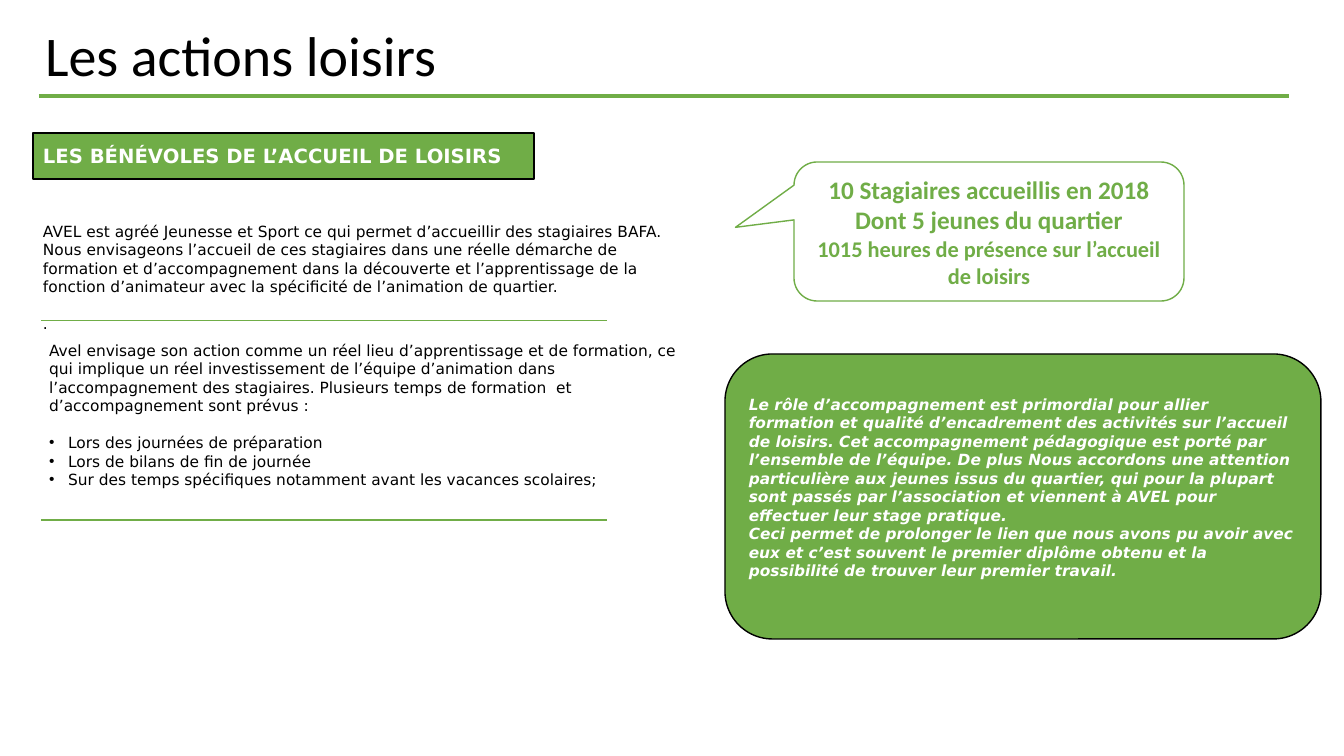
from lxml import etree
from pptx import Presentation
from pptx import util as u
from pptx.dml.color import RGBColor
from pptx.enum import shapes, text
from pptx.oxml import ns

PX = 914400 / 100.8
GREEN = RGBColor(0x70, 0xAD, 0x47)
BLACK = RGBColor(0, 0, 0)
WHITE = RGBColor(0xFF, 0xFF, 0xFF)


def px(*lengths):
    return [u.Emu(round(length * PX)) for length in lengths]


def write(box, lines, size, color, font="DejaVu Sans", bold=False, italic=False,
          align=text.PP_ALIGN.LEFT, anchor=text.MSO_ANCHOR.TOP):
    frame = box.text_frame
    frame.text = "\n".join(lines)
    frame.word_wrap = True
    frame.auto_size = text.MSO_AUTO_SIZE.NONE
    frame.vertical_anchor = anchor
    for para in frame.paragraphs:
        para.alignment = align
        para.space_before = u.Pt(0)
        for span in para.runs:
            span.font.name, span.font.size = font, u.Pt(size)
            span.font.bold, span.font.italic = bold, italic
            span.font.color.rgb = color
    return frame.paragraphs


deck = Presentation()
deck.slide_width, deck.slide_height = px(1344, 756)
page = deck.slides.add_slide(deck.slide_layouts[1])

# Title
title = page.shapes.title
title.left, title.top, title.width, title.height = px(35, 0, 1080, 94)
heading = write(title, ["Les actions loisirs"], 40, BLACK, "Calibri",
                anchor=text.MSO_ANCHOR.BOTTOM)
heading[0].line_spacing = 0.9

# Framed shapes: section banner, callout, role panel
frames = []
for kind, area, fill, outline, weight in [
    (shapes.MSO_SHAPE.RECTANGLE, (33, 133, 501, 46), GREEN, BLACK, 2),
    (shapes.MSO_SHAPE.ROUNDED_RECTANGULAR_CALLOUT, (794, 162, 390, 139), None, GREEN, 1),
    (shapes.MSO_SHAPE.ROUNDED_RECTANGLE, (725, 354, 596, 285), GREEN, BLACK, 1),
]:
    box = page.shapes.add_shape(kind, *px(*area))
    box.shadow.inherit = False
    if fill is None:
        box.fill.background()
    else:
        box.fill.solid()
        box.fill.fore_color.rgb = fill
    box.line.color.rgb = outline
    box.line.width = u.Pt(weight)
    frames.append(box)
banner, callout, panel = frames

write(banner, ["LES BÉNÉVOLES DE L’ACCUEIL DE LOISIRS"], 14, WHITE, bold=True,
      anchor=text.MSO_ANCHOR.MIDDLE)

callout.adjustments[0], callout.adjustments[1] = -0.65, -0.03
figures = write(callout, [
    "10 Stagiaires accueillis en 2018",
    "Dont 5 jeunes du quartier",
    "1015 heures de présence sur l’accueil de loisirs",
], 18, GREEN, "Calibri", bold=True, align=text.PP_ALIGN.CENTER,
    anchor=text.MSO_ANCHOR.MIDDLE)
figures[2].runs[0].font.size = u.Pt(16)

write(panel, [
    "Le rôle d’accompagnement est primordial pour allier formation et qualité "
    "d’encadrement des activités sur l’accueil de loisirs. Cet accompagnement "
    "pédagogique est porté par l’ensemble de l’équipe. De plus Nous accordons une "
    "attention particulière aux jeunes issus du quartier, qui pour la plupart sont "
    "passés par l’association et viennent à AVEL pour effectuer leur stage pratique.",
    "Ceci permet de prolonger le lien que nous avons pu avoir avec eux et c’est "
    "souvent le premier diplôme obtenu et la possibilité de trouver leur premier travail.",
], 11, WHITE, bold=True, italic=True, anchor=text.MSO_ANCHOR.MIDDLE)
panel.text_frame.margin_bottom = px(23)[0]

# Green rules
for left, right, y, weight in [(39, 1289, 96, 2.25), (41, 607, 321, 0.75), (41, 607, 520, 0.75)]:
    rule = page.shapes.add_connector(shapes.MSO_CONNECTOR.STRAIGHT, *px(left, y, right, y))
    rule.line.color.rgb = GREEN
    rule.line.width = u.Pt(weight)
    etree.SubElement(rule._element.spPr, ns.qn("a:effectLst"))

# Introduction
intro = page.shapes.add_textbox(*px(33, 217, 672, 122))
intro_paras = write(intro, [
    "AVEL est agréé Jeunesse et Sport ce qui permet d’accueillir des stagiaires BAFA. "
    "Nous envisageons l’accueil de ces stagiaires dans une réelle démarche de formation "
    "et d’accompagnement dans la découverte et l’apprentissage de la fonction "
    "d’animateur avec la spécificité de l’animation de quartier.",
    ".",
], 11, BLACK)
intro_paras[1].space_before = u.Pt(13)

# Training times
body = page.placeholders[1]
body.left, body.top, body.width, body.height = px(39, 336, 672, 160)
body_paras = write(body, [
    "Avel envisage son action comme un réel lieu d’apprentissage et de formation, ce qui "
    "implique un réel investissement de l’équipe d’animation dans l’accompagnement des "
    "stagiaires. Plusieurs temps de formation  et d’accompagnement sont prévus :",
    "Lors des journées de préparation",
    "Lors de bilans de fin de journée",
    "Sur des temps spécifiques notamment avant les vacances scolaires;",
], 11, BLACK)
body_paras[1].space_before = u.Pt(13)
for index, para in enumerate(body_paras):
    props = para._p.get_or_add_pPr()
    indent = px(19)[0] if index else 0
    props.set("marL", str(indent))
    props.set("indent", str(-indent))
    if index:
        etree.SubElement(props, ns.qn("a:buFont"), typeface="Arial")
        etree.SubElement(props, ns.qn("a:buChar"), char="•")
    else:
        etree.SubElement(props, ns.qn("a:buNone"))

deck.save("out.pptx")
